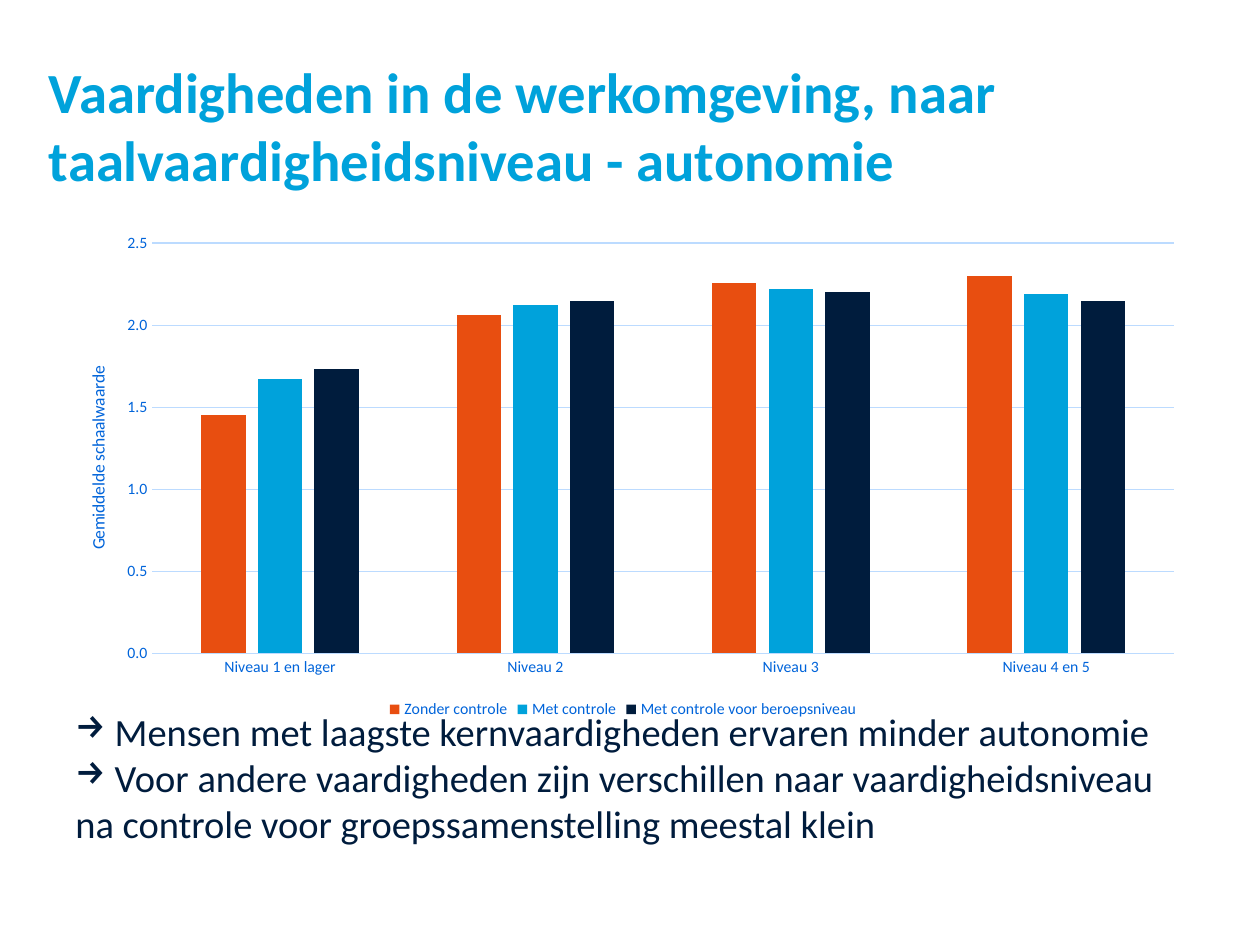
from dataclasses import dataclass

from lxml import etree
from pptx import Presentation
from pptx.chart.data import CategoryChartData
from pptx.dml.color import RGBColor
from pptx.enum import chart as chart_enum, text as text_enum
from pptx.oxml import ns
from pptx.util import Pt


@dataclass(frozen=True)
class Theme:
    font: str = "Calibri"
    cyan: str = "00A2DB"
    navy: str = "001C3D"
    orange: str = "E84E10"
    label: str = "0064DA"
    grid: str = "BCDBFF"
    title_size: float = 32.4
    body_size: float = 22
    axis_title_size: float = 10
    label_size: float = 9


@dataclass(frozen=True)
class Box:
    left: float
    top: float
    width: float
    height: float

    def lengths(self) -> tuple:
        return Pt(self.left), Pt(self.top), Pt(self.width), Pt(self.height)


@dataclass(frozen=True)
class Series:
    name: str
    values: tuple
    color: str


@dataclass(frozen=True)
class Line:
    text: str
    bullet: str = ""


THEME = Theme()
TITLE_BOX = Box(28, 32.5, 656, 60)
CHART_BOX = Box(28, 127.5, 656, 286)
BODY_BOX = Box(36, 401, 656, 87)
BULLET_INDENT = 22.5

TITLE = [Line("Vaardigheden in de werkomgeving, naar taalvaardigheidsniveau - autonomie")]
FINDINGS = [
    Line("Mensen met laagste kernvaardigheden ervaren minder autonomie", "→"),
    Line("Voor andere vaardigheden zijn verschillen naar vaardigheidsniveau", "→"),
    Line("na controle voor groepssamenstelling meestal klein"),
]
LEVELS = ["Niveau 1 en lager", "Niveau 2", "Niveau 3", "Niveau 4 en 5"]
SERIES = [
    Series("Zonder controle", (1.45, 2.06, 2.26, 2.3), THEME.orange),
    Series("Met controle", (1.67, 2.12, 2.22, 2.19), THEME.cyan),
    Series("Met controle voor beroepsniveau", (1.73, 2.15, 2.2, 2.15), THEME.navy),
]


def set_font(font, size: float, color: str, bold: bool = False) -> None:
    font.name = THEME.font
    font.size = Pt(size)
    font.bold = bold
    font.color.rgb = RGBColor.from_string(color)


def set_line(line, color: str) -> None:
    line.width = Pt(0.75)
    line.color.rgb = RGBColor.from_string(color)


def add_bullet(paragraph, character: str) -> None:
    properties = paragraph._p.get_or_add_pPr()
    properties.set("marL", str(Pt(BULLET_INDENT)))
    properties.set("indent", str(-Pt(BULLET_INDENT)))
    bullet = etree.SubElement(properties, ns.qn("a:buChar"))
    bullet.set("char", character)


def add_text(slide, box: Box, lines: list, *, size: float, color: str,
             bold: bool = False, inset: tuple = (7.2, 3.6)) -> None:
    frame = slide.shapes.add_textbox(*box.lengths()).text_frame
    frame.word_wrap = True
    frame.vertical_anchor = text_enum.MSO_ANCHOR.TOP
    frame.margin_left = frame.margin_right = Pt(inset[0])
    frame.margin_top = frame.margin_bottom = Pt(inset[1])
    for index, line in enumerate(lines):
        paragraph = frame.add_paragraph() if index else frame.paragraphs[0]
        if line.bullet:
            add_bullet(paragraph, line.bullet)
        run = paragraph.add_run()
        run.text = line.text
        set_font(run.font, size, color, bold)


def place(element, successors: tuple, **fractions) -> None:
    """Give a chart part a fixed place, in fractions of the chart area."""
    for old in element.findall(ns.qn("c:layout")):
        element.remove(old)
    layout = etree.Element(ns.qn("c:layout"))
    manual = etree.SubElement(layout, ns.qn("c:manualLayout"))
    for name, value in fractions.items():
        etree.SubElement(manual, ns.qn(f"c:{name}")).set("val", str(value))
    following = (child for child in element
                 if child.tag in [ns.qn(name) for name in successors])
    successor = next(following, None)
    if successor is None:
        element.append(layout)
    else:
        successor.addprevious(layout)


def style_axes(chart) -> None:
    category_axis, value_axis = chart.category_axis, chart.value_axis
    for axis in (category_axis, value_axis):
        axis.major_tick_mark = axis.minor_tick_mark = chart_enum.XL_TICK_MARK.NONE
        set_font(axis.tick_labels.font, THEME.label_size, THEME.label)
    set_line(category_axis.format.line, THEME.grid)
    value_axis.format.line.fill.background()
    value_axis.has_major_gridlines = True
    set_line(value_axis.major_gridlines.format.line, THEME.grid)
    value_axis.minimum_scale, value_axis.maximum_scale = 0, 2.5
    value_axis.major_unit = 0.5
    value_axis.tick_labels.number_format = "0.0"
    value_axis.tick_labels.number_format_is_linked = False

    title = value_axis.axis_title
    title.text_frame.text = "Gemiddelde schaalwaarde"
    set_font(title.text_frame.paragraphs[0].runs[0].font,
             THEME.axis_title_size, THEME.label)
    place(title._element, ("c:overlay", "c:spPr", "c:txPr"),
          xMode="edge", yMode="edge", x=0.03, y=0.28)


def add_column_chart(slide, box: Box) -> None:
    data = CategoryChartData(number_format="0.00")
    data.categories = LEVELS
    for series in SERIES:
        data.add_series(series.name, series.values)
    chart = slide.shapes.add_chart(
        chart_enum.XL_CHART_TYPE.COLUMN_CLUSTERED, *box.lengths(), data).chart
    set_font(chart.font, THEME.axis_title_size, THEME.navy)
    chart.has_title = False

    plot = chart.plots[0]
    plot.gap_width, plot.overlap, plot.vary_by_categories = 219, -27, False
    for drawn, series in zip(plot.series, SERIES):
        drawn.format.fill.solid()
        drawn.format.fill.fore_color.rgb = RGBColor.from_string(series.color)

    style_axes(chart)
    place(chart._chartSpace.chart.plotArea, ("c:barChart",), layoutTarget="inner",
          xMode="edge", yMode="edge", x=0.09, y=0.04, w=0.89, h=0.82)
    chart.has_legend = True
    chart.legend.position = chart_enum.XL_LEGEND_POSITION.BOTTOM
    chart.legend.include_in_layout = False
    set_font(chart.legend.font, THEME.label_size, THEME.label)


def main() -> None:
    presentation = Presentation()
    presentation.slide_width, presentation.slide_height = Pt(720), Pt(540)
    slide = presentation.slides.add_slide(presentation.slide_layouts[6])
    add_text(slide, TITLE_BOX, TITLE, size=THEME.title_size, color=THEME.cyan,
             bold=True, inset=(0, 0))
    add_column_chart(slide, CHART_BOX)
    add_text(slide, BODY_BOX, FINDINGS, size=THEME.body_size, color=THEME.navy)
    presentation.save("out.pptx")


if __name__ == "__main__":
    main()
